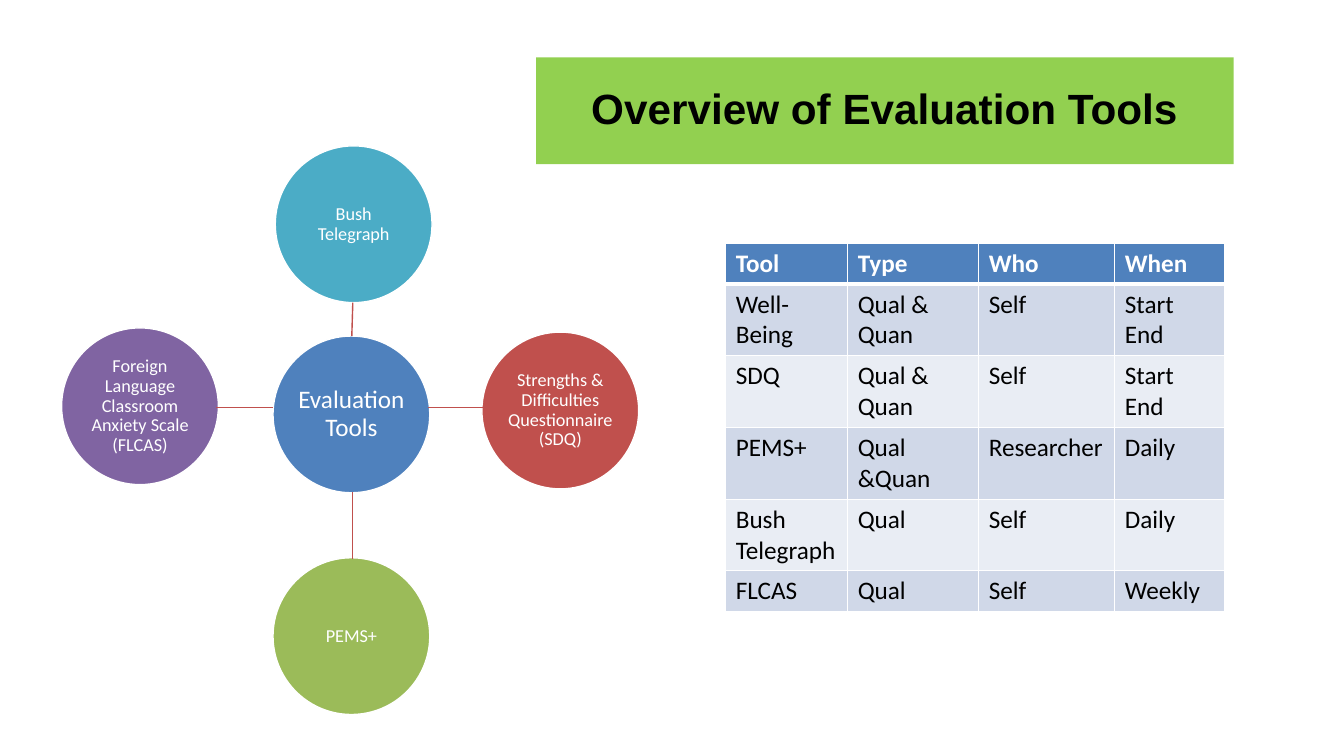
import pptx
import pptx.util
import pptx.dml.color
import pptx.enum.shapes
import pptx.enum.text
import pptx.oxml.ns
import lxml.etree

Pt = pptx.util.Pt
PP_ALIGN = pptx.enum.text.PP_ALIGN
MIDDLE = pptx.enum.text.MSO_ANCHOR.MIDDLE

COLOURS = {
    "banner": "92D050", "ink": "000000", "paper": "FFFFFF",
    "hub": "4F81BD", "link": "C0504D", "sdq": "C0504D",
    "pems": "9BBB59", "flcas": "8064A2", "bush": "4BACC6",
    "header": "4F81BD", "band": "D0D8E8", "plain": "E9EDF4",
}
DIAMETER = 112
HUB = ("Evaluation Tools", "hub", 151, 135.8, 18)
SATELLITES = [
    ("Strengths & Difficulties Questionnaire (SDQ)", "sdq", 300.2, 133, 13),
    ("PEMS+", "pems", 151, 294.2, 13),
    ("Foreign Language Classroom Anxiety Scale (FLCAS)", "flcas", 0, 130, 13),
    ("Bush Telegraph", "bush", 152.6, 0, 13),
]
LINKS = [
    (262, 187, 303, 187),
    (208, 247.4, 208, 294.9),
    (151, 187, 110, 187),
    (207.3, 135.8, 208, 112),
]
TOOLS = [
    ("Tool", "Type", "Who", "When"),
    ("Well-Being", "Qual & Quan", "Self", "Start\nEnd"),
    ("SDQ", "Qual & Quan", "Self", "Start\nEnd"),
    ("PEMS+", "Qual &Quan", "Researcher", "Daily"),
    ("Bush Telegraph", "Qual", "Self", "Daily"),
    ("FLCAS", "Qual", "Self", "Weekly"),
]
COLUMN_SHARES = [1.21, 1.3, 1.35, 1.09]
ROW_HEIGHTS = [29.2, 51.2, 51.2, 51.2, 51.2, 29.2]


def rgb(key):
    """Return the named colour."""
    return pptx.dml.color.RGBColor.from_string(COLOURS[key])


def paint(fill, key):
    """Make a fill solid in the named colour."""
    fill.solid()
    fill.fore_color.rgb = rgb(key)


def set_font(paragraph, name, size, key, bold=False):
    """Format all the text of a paragraph."""
    paragraph.font.name = name
    paragraph.font.size = Pt(size)
    paragraph.font.bold = bold
    paragraph.font.color.rgb = rgb(key)


def set_margins(frame, margin):
    """Give a text frame the same margin on all sides."""
    frame.margin_left = frame.margin_right = Pt(margin)
    frame.margin_top = frame.margin_bottom = Pt(margin)


def add_banner(slide, left, top, width, height):
    """Place the title on its green banner."""
    banner = slide.shapes.title
    banner.left, banner.top = Pt(left), Pt(top)
    banner.width, banner.height = Pt(width), Pt(height)
    paint(banner.fill, "banner")
    frame = banner.text_frame
    frame.text = "Overview of Evaluation Tools"
    frame.word_wrap = True
    frame.auto_size = pptx.enum.text.MSO_AUTO_SIZE.NONE
    frame.vertical_anchor = MIDDLE
    set_margins(frame, 7.2)
    heading = frame.paragraphs[0]
    heading.alignment = PP_ALIGN.CENTER
    heading.line_spacing = 0.9
    set_font(heading, "Arial", 30.2, "ink", True)


def add_circle(slide, left, top, label, key, size):
    """Draw one labelled circle of the diagram."""
    circle = slide.shapes.add_shape(
        pptx.enum.shapes.MSO_SHAPE.OVAL, Pt(left), Pt(top), Pt(DIAMETER), Pt(DIAMETER))
    circle.shadow.inherit = False
    paint(circle.fill, key)
    circle.line.color.rgb = rgb("paper")
    circle.line.width = Pt(1)
    frame = circle.text_frame
    frame.word_wrap = True
    frame.vertical_anchor = MIDDLE
    set_margins(frame, 0.9)
    frame.text = label
    caption = frame.paragraphs[0]
    caption.alignment = PP_ALIGN.CENTER
    caption.line_spacing = 0.9
    set_font(caption, "Calibri", size, "paper")


def add_tool_diagram(slide, left, top):
    """Draw the hub, its four tools and the links between them."""
    for label, key, x, y, size in [HUB] + SATELLITES:
        add_circle(slide, left + x, top + y, label, key, size)
    for x1, y1, x2, y2 in LINKS:
        link = slide.shapes.add_connector(
            pptx.enum.shapes.MSO_CONNECTOR.STRAIGHT,
            Pt(left + x1), Pt(top + y1), Pt(left + x2), Pt(top + y2))
        link.line.color.rgb = rgb("link")
        link.line.width = Pt(1)
        lxml.etree.SubElement(link._element.spPr, pptx.oxml.ns.qn("a:effectLst"))


def add_borders(cell, bottom):
    """Rule a cell in white, with its own bottom width."""
    qn = pptx.oxml.ns.qn
    properties = cell._tc.get_or_add_tcPr()
    for position, (side, width) in enumerate(
            [("a:lnL", 1), ("a:lnR", 1), ("a:lnT", 1), ("a:lnB", bottom)]):
        border = lxml.etree.Element(qn(side), w=str(Pt(width)))
        solid = lxml.etree.SubElement(border, qn("a:solidFill"))
        lxml.etree.SubElement(solid, qn("a:srgbClr"), val=COLOURS["paper"])
        properties.insert(position, border)


def add_tool_table(slide, left, top, width):
    """Build the table of tools."""
    table = slide.shapes.add_table(
        len(TOOLS), len(COLUMN_SHARES), Pt(left), Pt(top), Pt(width),
        Pt(sum(ROW_HEIGHTS))).table
    for column, share in zip(table.columns, COLUMN_SHARES):
        column.width = Pt(width * share / sum(COLUMN_SHARES))
    for r, (entries, height) in enumerate(zip(TOOLS, ROW_HEIGHTS)):
        table.rows[r].height = Pt(height)
        is_header = r == 0
        fill_key = "header" if is_header else "band" if r % 2 else "plain"
        for c, entry in enumerate(entries):
            cell = table.cell(r, c)
            cell.text = entry
            paint(cell.fill, fill_key)
            add_borders(cell, 3 if is_header else 1)
            for paragraph in cell.text_frame.paragraphs:
                set_font(paragraph, "Calibri", 18, "paper" if is_header else "ink", is_header)


def main():
    """Build and save the slide."""
    deck = pptx.Presentation()
    deck.slide_width, deck.slide_height = Pt(960), Pt(540)
    slide = deck.slides.add_slide(deck.slide_layouts[5])
    add_tool_diagram(slide, 44, 104.2)
    add_tool_table(slide, 518.4, 173.8, 356.4)
    add_banner(slide, 383, 41, 498.2, 76.3)
    deck.save("out.pptx")


if __name__ == "__main__":
    main()
